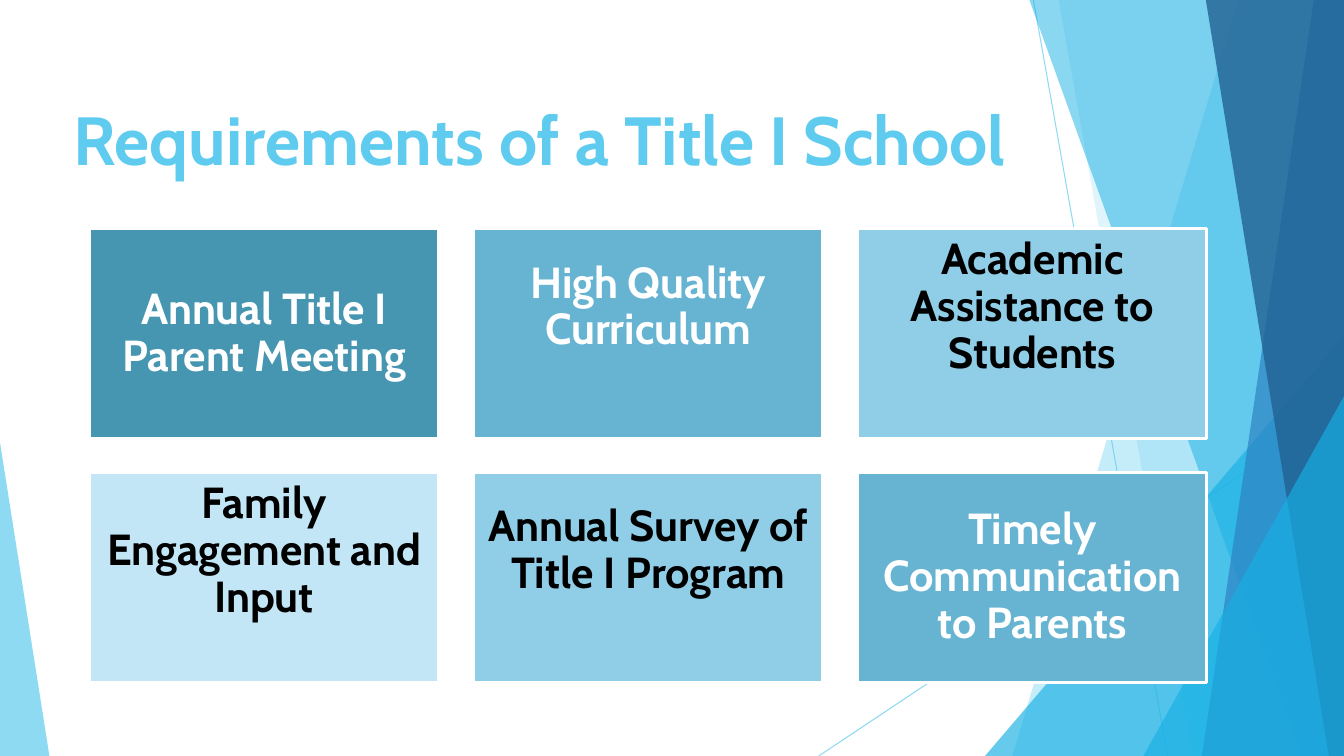
from lxml import etree
from pptx import Presentation
from pptx import util as u
from pptx.dml.color import RGBColor
from pptx.enum import shapes, text
from pptx.oxml.ns import qn

WHITE = RGBColor(0xFF, 0xFF, 0xFF)
BLACK = RGBColor(0x00, 0x00, 0x00)
SKY = RGBColor(0x5F, 0xCB, 0xEF)
CYAN = RGBColor(0x17, 0xB0, 0xE4)
BLUE = RGBColor(0x2E, 0x83, 0xC3)
NAVY = RGBColor(0x22, 0x62, 0x92)
TEAL = RGBColor(0x46, 0x96, 0xB1)
MEDIUM = RGBColor(0x66, 0xB4, 0xD1)
LIGHT = RGBColor(0x90, 0xCE, 0xE7)
PALE = RGBColor(0xC2, 0xE6, 0xF6)

WIDTH, HEIGHT = 13.33, 7.5


def set_opacity(shape, percent):
    color = next(shape._element.spPr.iter(qn("a:srgbClr")))
    etree.SubElement(color, qn("a:alpha"), val=str(percent * 1000))


def write(shape, words, size, color):
    frame = shape.text_frame
    frame.word_wrap = True
    frame.text = words
    para = frame.paragraphs[0]
    font = para.runs[0].font
    font.name, font.size, font.bold = "Cabin", u.Pt(size), True
    font.color.rgb = color
    return frame, para


deck = Presentation()
deck.slide_width, deck.slide_height = u.Inches(WIDTH), u.Inches(HEIGHT)
page = deck.slides.add_slide(deck.slide_layouts[6])

for ends in [(10.25, 0, 11.58, HEIGHT), (WIDTH, 4.03, 8.12, HEIGHT)]:
    ray = page.shapes.add_connector(shapes.MSO_CONNECTOR.STRAIGHT, *map(u.Inches, ends))
    ray.line.color.rgb = SKY
    ray.line.width = u.Pt(0.75)
    set_opacity(ray, 70)
    etree.SubElement(ray._element.spPr, qn("a:effectLst"))

facets = [
    ("band", (12.28, 10.04), SKY, 36),
    ("band", (10.5, 11.83), SKY, 20),
    ("triangle", (9.77, 3.33, 3.56, 4.17, 1), CYAN, 66),
    ("band", (10.21, 12.91), CYAN, 50),
    ("band", (13.03, 11.92), BLUE, 70),
    ("band", (11.96, 13.18), NAVY, 80),
    ("triangle", (11.34, 3.93, 1.99, 3.57, 1), CYAN, 66),
    ("triangle", (0, 4.39, 0.49, 3.11, 0), SKY, 70),
]
for kind, place, color, opacity in facets:
    if kind == "band":
        top_x, bottom_x = place
        outline = page.shapes.build_freeform(u.Inches(top_x), 0)
        corners = [(WIDTH, 0), (WIDTH, HEIGHT), (bottom_x, HEIGHT)]
        outline.add_line_segments([(u.Inches(x), u.Inches(y)) for x, y in corners])
        facet = outline.convert_to_shape()
    else:
        *bounds, apex = place
        facet = page.shapes.add_shape(
            shapes.MSO_SHAPE.ISOSCELES_TRIANGLE, *map(u.Inches, bounds))
        facet.adjustments[0] = apex
    facet.shadow.inherit = False
    facet.fill.solid()
    facet.fill.fore_color.rgb = color
    set_opacity(facet, opacity)
    facet.line.fill.background()

title = page.shapes.add_textbox(*map(u.Inches, (0.63, 0.26, 12.05, 1.57)))
frame, para = write(title, "Requirements of a Title I School", 48.6, SKY)
frame.vertical_anchor = text.MSO_ANCHOR.BOTTOM

MARGIN, RAISED_MARGIN = 0.13, 0.65
requirements = [
    ("Annual Title I Parent Meeting", TEAL, WHITE, MARGIN),
    ("High Quality Curriculum", MEDIUM, WHITE, RAISED_MARGIN),
    ("Academic Assistance to Students", LIGHT, BLACK, RAISED_MARGIN),
    ("Family Engagement and Input", PALE, BLACK, RAISED_MARGIN),
    ("Annual Survey of Title I Program", LIGHT, BLACK, RAISED_MARGIN),
    ("Timely Communication to Parents", MEDIUM, WHITE, MARGIN),
]
for index, (words, fill, ink, bottom) in enumerate(requirements):
    row, column = divmod(index, 3)
    box = page.shapes.add_shape(
        shapes.MSO_SHAPE.RECTANGLE,
        u.Inches(0.89 + 3.81 * column), u.Inches(2.27 + 2.42 * row),
        u.Inches(3.46), u.Inches(2.08))
    box.shadow.inherit = False
    box.fill.solid()
    box.fill.fore_color.rgb = fill
    box.line.color.rgb = WHITE
    box.line.width = u.Pt(2)
    frame, para = write(box, words, 31, ink)
    frame.margin_left = frame.margin_right = frame.margin_top = u.Inches(MARGIN)
    frame.margin_bottom = u.Inches(bottom)
    frame.vertical_anchor = text.MSO_ANCHOR.MIDDLE
    para.alignment = text.PP_ALIGN.CENTER
    para.line_spacing = 0.9

deck.save("out.pptx")
